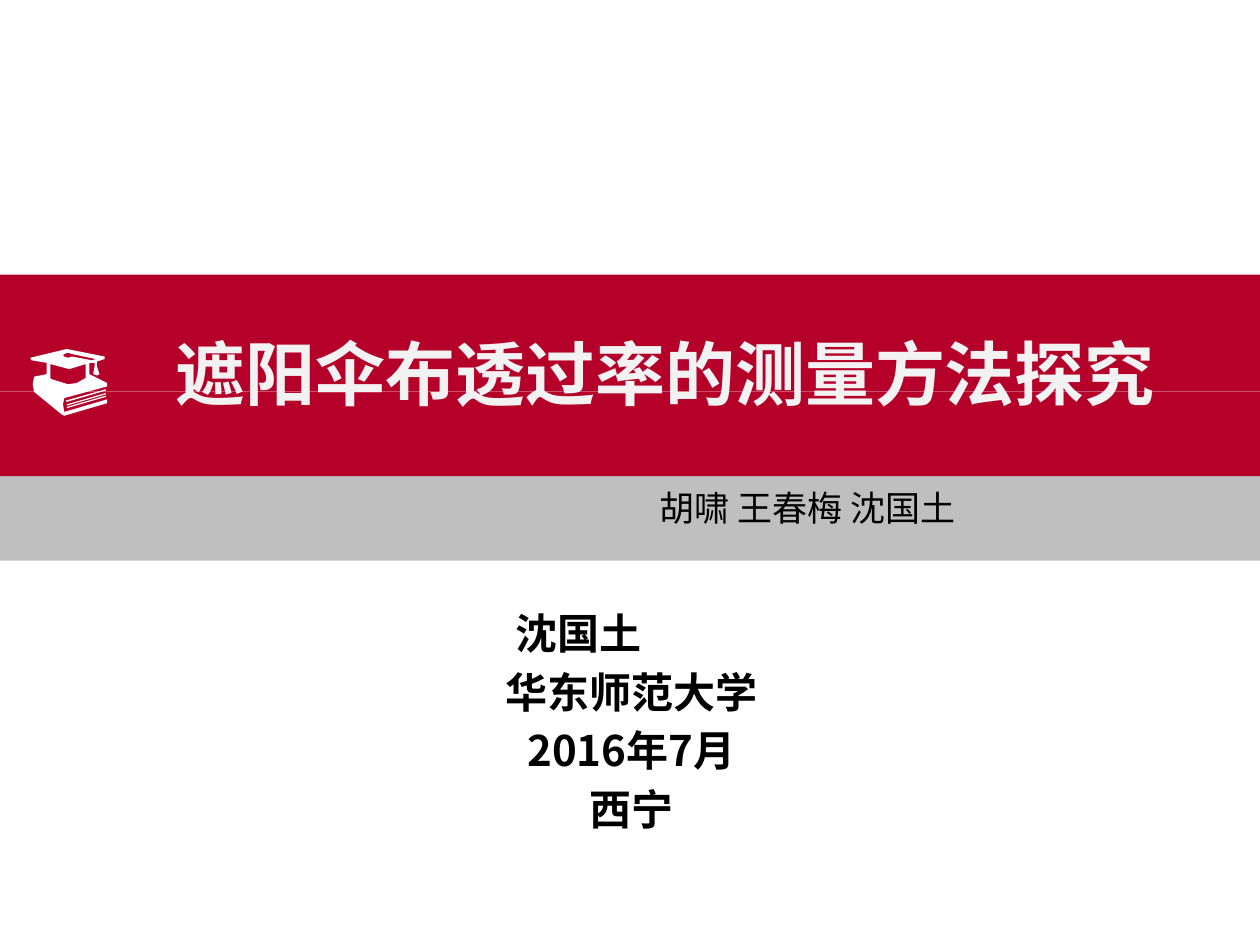
from dataclasses import dataclass

from lxml.etree import SubElement
from pptx import Presentation
from pptx.dml.color import RGBColor
from pptx.enum.shapes import MSO_SHAPE
from pptx.enum.text import MSO_ANCHOR, MSO_AUTO_SIZE, PP_ALIGN
from pptx.oxml.ns import qn
from pptx.util import Inches, Pt


@dataclass(frozen=True)
class Theme:
    font: str = "Noto Sans CJK SC"
    red: str = "B50029"
    grey: str = "BFBFBF"
    white: str = "FFFFFF"
    title_color: str = "F2F2F2"
    text_color: str = "000000"
    title_size: int = 40
    author_size: int = 20
    detail_size: int = 24


THEME = Theme()

TITLE = "遮阳伞布透过率的测量方法探究"
AUTHORS = "胡啸 王春梅 沈国土"
PRESENTER = "沈国土"
DETAILS = ["华东师范大学", "2016年7月", "西宁"]

TITLE_BOX = (0.83, 2.57, 8.9, 1.88)
DETAIL_BOX = (1.51, 4.77, 7, 1.92)
BANDS = [
    ((0, 2.18, 10.02, 0.93), THEME.red),
    ((0, 3.77, 10, 0.68), THEME.grey),
    ((0, 3.11, 10, 0.67), THEME.red),
]

# Outlines of the cap-and-book icon, in hundredths of an inch on the slide
CAP_BAND = [(40, 289), (40, 300), (41, 301), (54, 305), (61, 304), (68, 300),
            (68, 289), (55, 293)]
CAP_AND_BOOK = [
    (77, 291), (79, 297), (77, 298), (74, 297), (75, 291), (75, 288),
    (71, 288), (71, 297), (85, 304), (85, 307), (84, 307), (51, 316),
    (50, 321), (51, 327), (85, 317), (85, 320), (51, 330), (49, 329),
    (27, 311), (26, 305), (27, 299), (37, 297), (37, 288), (25, 286),
    (24, 284), (53, 277), (83, 283), (83, 285), (77, 287), (77, 289),
]
CAP_CORD = [(73, 286), (76, 285), (57, 281), (54, 280), (51, 281), (50, 282),
            (51, 283), (54, 284), (57, 283)]
PAGE_LINES = [
    [(53, 323), (53, 324), (84, 315), (84, 314)],
    [(53, 321), (53, 322), (84, 313), (84, 312)],
    [(52, 318), (53, 319), (84, 310), (84, 309)],
]
ICON = [CAP_AND_BOOK, CAP_BAND, CAP_CORD, *PAGE_LINES]


def paint(shape, color):
    shape.shadow.inherit = False
    shape.fill.solid()
    shape.fill.fore_color.rgb = RGBColor.from_string(color)
    shape.line.fill.background()


def place(shape, box):
    shape.left, shape.top, shape.width, shape.height = map(Inches, box)
    frame = shape.text_frame
    frame.word_wrap = True
    frame.auto_size = MSO_AUTO_SIZE.NONE
    frame.vertical_anchor = MSO_ANCHOR.TOP
    return frame


def write(paragraph, text, size, color, bold, left_margin=0,
          align=PP_ALIGN.CENTER, before=0):
    properties = paragraph._p.get_or_add_pPr()
    properties.set("marL", str(Inches(left_margin)))
    properties.set("indent", "0")
    paragraph.alignment = align
    paragraph.space_before = Pt(before)
    run = paragraph.add_run()
    run.text = text
    run.font.size = Pt(size)
    run.font.bold = bold
    run.font.color.rgb = RGBColor.from_string(color)
    run.font.name = THEME.font
    SubElement(run._r.get_or_add_rPr(), qn("a:ea")).set("typeface", THEME.font)


def add_bands(slide):
    for box, color in BANDS:
        band = slide.shapes.add_shape(MSO_SHAPE.RECTANGLE, *map(Inches, box))
        paint(band, color)


def add_icon(slide):
    builder = slide.shapes.build_freeform(*ICON[0][0], scale=Inches(0.01))
    builder.add_line_segments(ICON[0][1:], close=True)
    for start, *points in ICON[1:]:
        builder.move_to(*start)
        builder.add_line_segments(points, close=True)
    paint(builder.convert_to_shape(), THEME.white)


def fill_title(title):
    frame = place(title, TITLE_BOX)
    write(frame.paragraphs[0], TITLE, THEME.title_size, THEME.title_color, True)
    write(frame.add_paragraph(), AUTHORS, THEME.author_size, THEME.text_color,
          False, left_margin=2.26, before=41.5)


def fill_details(subtitle):
    frame = place(subtitle, DETAIL_BOX)
    style = dict(size=THEME.detail_size, color=THEME.text_color, bold=True)
    write(frame.paragraphs[0], PRESENTER, left_margin=2.48,
          align=PP_ALIGN.LEFT, **style)
    for detail in DETAILS:
        write(frame.add_paragraph(), detail, before=4.8, **style)


def main():
    presentation = Presentation()
    presentation.slide_width, presentation.slide_height = Inches(10), Inches(7.5)
    slide = presentation.slides.add_slide(presentation.slide_layouts[0])
    title, subtitle = slide.placeholders
    fill_details(subtitle)
    add_bands(slide)
    fill_title(title)
    title.element.getparent().append(title.element)  # in front of the bands
    add_icon(slide)
    presentation.save("out.pptx")


if __name__ == "__main__":
    main()
